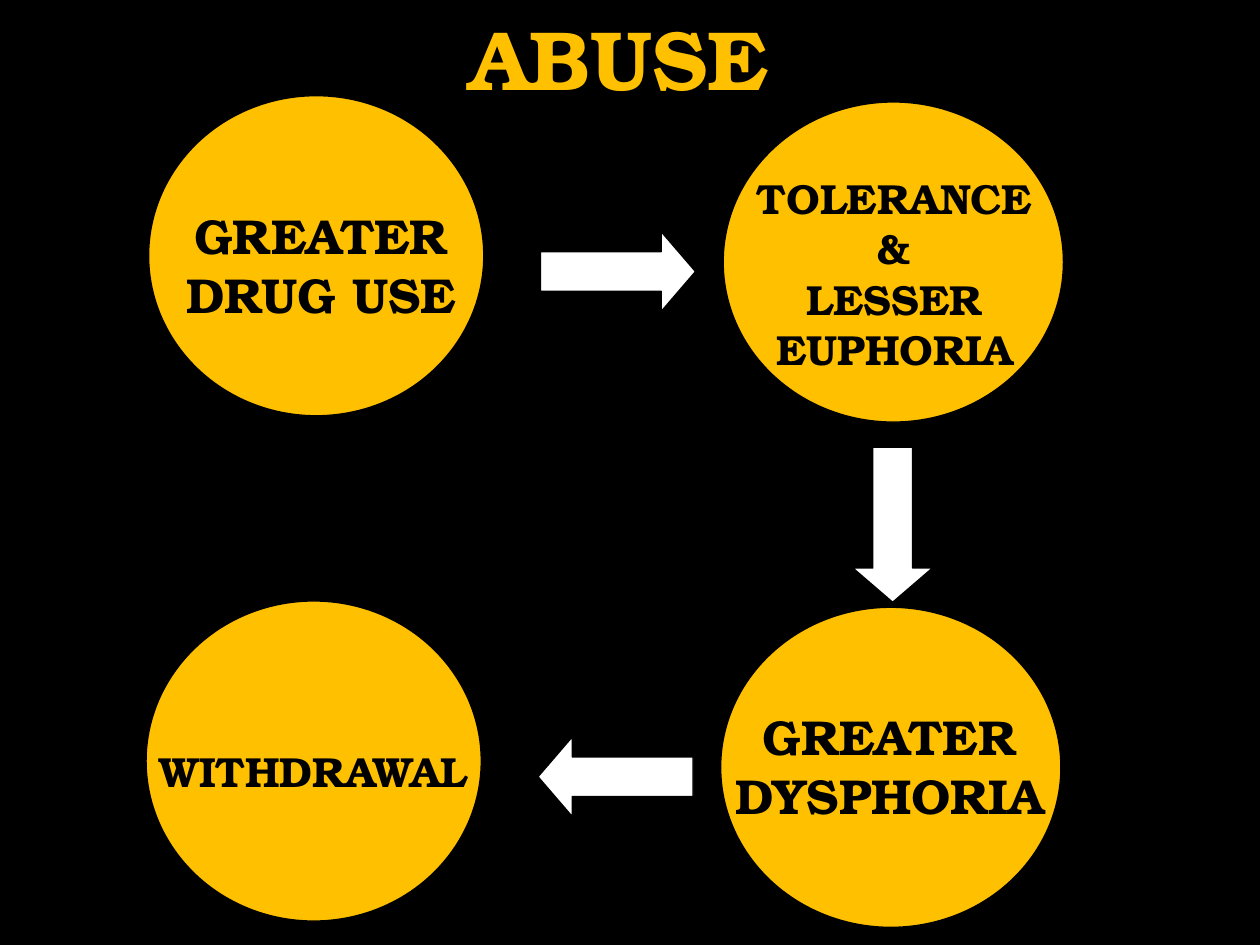
import pptx
import pptx.util
import pptx.dml.color
import pptx.enum.shapes
import pptx.enum.text

Inches, Pt = pptx.util.Inches, pptx.util.Pt
RGBColor = pptx.dml.color.RGBColor
SHAPE = pptx.enum.shapes.MSO_SHAPE
ANCHOR = pptx.enum.text.MSO_ANCHOR

BLACK = RGBColor(0x00, 0x00, 0x00)
WHITE = RGBColor(0xFF, 0xFF, 0xFF)
GOLD = RGBColor(0xFF, 0xC0, 0x00)
FONT = "TeX Gyre Bonum"

# Content: each stage has its circle, the box of its label, and the label
TITLE = "ABUSE"
STAGES = [
    ((1.18, 0.76, 2.66, 2.54), (1.22, 1.58, 2.66, 1.0), 28,
     ["GREATER", "DRUG USE"]),
    ((5.74, 0.81, 2.7, 2.54), (5.75, 1.32, 2.7, 1.66), 24,
     ["TOLERANCE", "&", "LESSER", "EUPHORIA"]),
    ((5.72, 4.82, 2.7, 2.54), (5.71, 5.56, 2.7, 1.07), 28,
     ["GREATER", "DYSPHORIA"]),
    ((1.16, 4.77, 2.66, 2.54), (1.12, 5.87, 2.74, 0.58), 24,
     ["WITHDRAWAL"]),
]
# Arrows between stages: left, top, rotation
ARROWS = [(4.59, 1.54, 270), (6.77, 3.55, 0), (4.57, 5.55, 90)]
ARROW_SIZE = (0.63, 1.23)


def put_text(frame, lines, size=24, color=BLACK, wrap=True,
             anchor=ANCHOR.TOP):
    frame.word_wrap = wrap
    frame.auto_size = pptx.enum.text.MSO_AUTO_SIZE.NONE
    frame.vertical_anchor = anchor
    for i, line in enumerate(lines):
        para = frame.add_paragraph() if i else frame.paragraphs[0]
        para.alignment = pptx.enum.text.PP_ALIGN.CENTER
        run = para.add_run()
        run.text = line
        font = run.font
        font.name, font.size, font.bold = FONT, Pt(size), True
        font.color.rgb = color


def add_form(slide, kind, box, fill):
    form = slide.shapes.add_shape(kind, *map(Inches, box))
    form.shadow.inherit = False
    form.fill.solid()
    form.fill.fore_color.rgb = fill
    form.line.color.rgb = BLACK
    form.line.width = Pt(0.75)
    return form


def main():
    deck = pptx.Presentation()
    deck.slide_width, deck.slide_height = Inches(10), Inches(7.5)
    slide = deck.slides.add_slide(deck.slide_layouts[5])
    slide.background.fill.solid()
    slide.background.fill.fore_color.rgb = BLACK

    # Title
    title = slide.shapes.title
    title.left, title.top = Inches(3.61), Inches(0)
    title.width, title.height = Inches(2.6), Inches(0.91)
    put_text(title.text_frame, [TITLE], size=48, color=GOLD, wrap=False,
             anchor=ANCHOR.MIDDLE)

    # Stages of the cycle
    for circle, box, size, lines in STAGES:
        add_form(slide, SHAPE.OVAL, circle, GOLD)
        label = slide.shapes.add_textbox(*map(Inches, box))
        put_text(label.text_frame, lines, size=size)

    # Arrows from stage to stage
    for left, top, turn in ARROWS:
        arrow = add_form(slide, SHAPE.DOWN_ARROW, (left, top, *ARROW_SIZE),
                         WHITE)
        arrow.adjustments[0] = 0.5
        arrow.adjustments[1] = 0.43
        arrow.rotation = turn

    deck.save("out.pptx")


if __name__ == "__main__":
    main()
